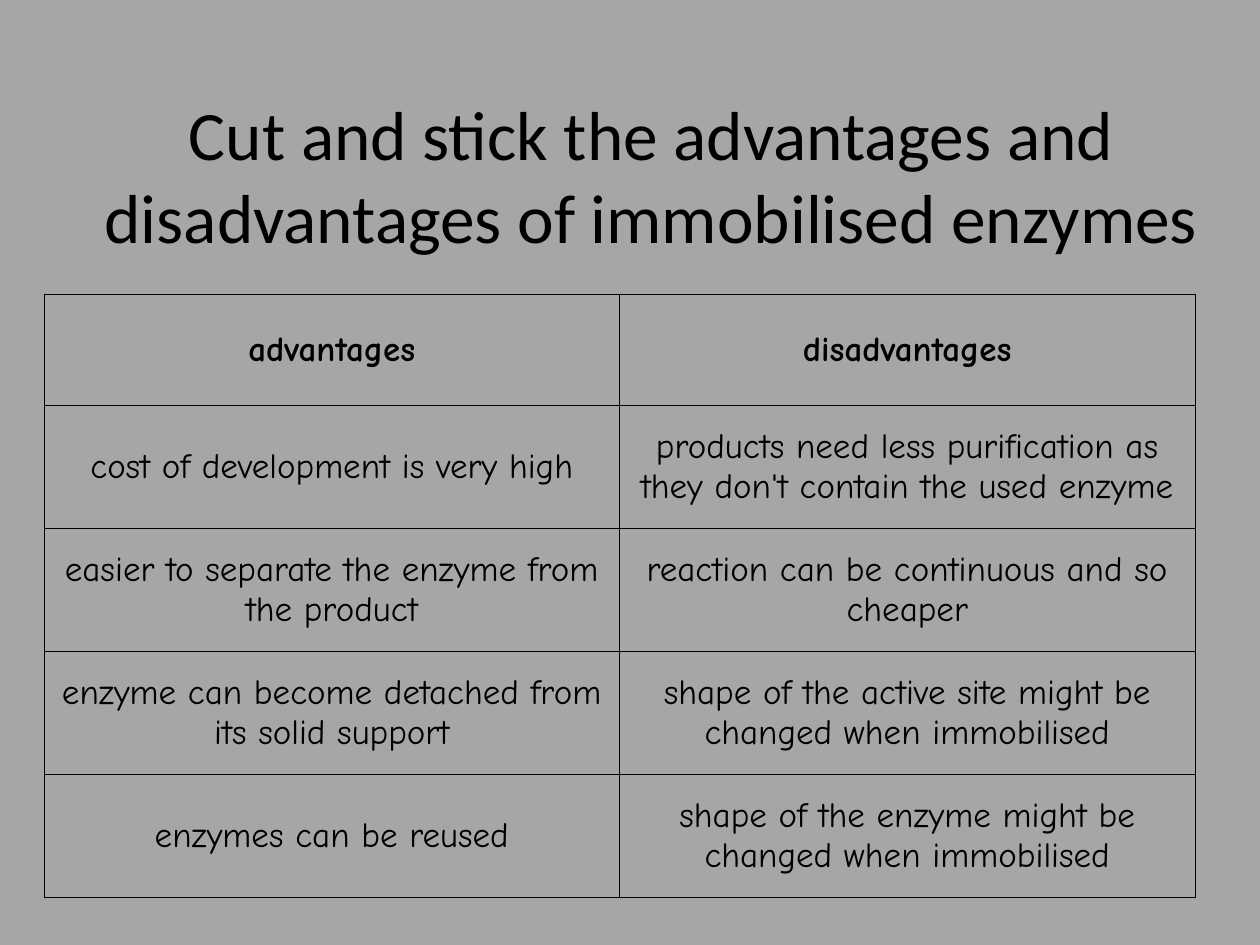
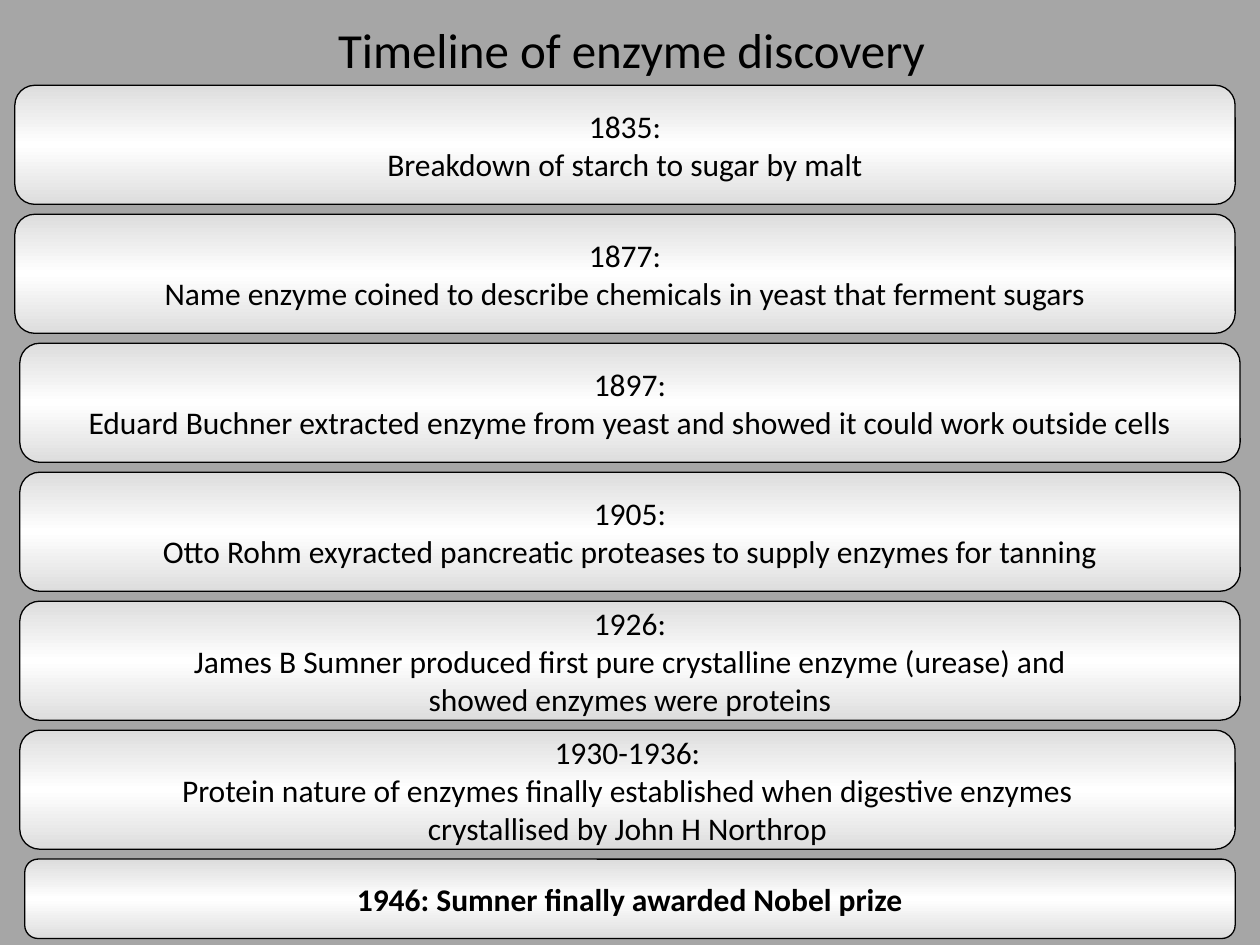
from copy import deepcopy
from lxml.etree import SubElement
from pptx import Presentation
from pptx.dml.color import RGBColor
from pptx.enum.shapes import MSO_SHAPE
from pptx.enum.text import MSO_ANCHOR, PP_ALIGN
from pptx.oxml.ns import qn
from pptx.util import Cm, Pt

GREY = RGBColor(0xA6, 0xA6, 0xA6)
SILVER = RGBColor(0xDD, 0xDD, 0xDD)
WHITE = RGBColor(0xFF, 0xFF, 0xFF)
BLACK = RGBColor(0, 0, 0)
SANS = "Calibri"
COMIC = "Comic Neue"

POINTS = [
    ("advantages", "disadvantages"),
    ("cost of development is very high",
     "products need less purification as they don't contain the used enzyme"),
    ("easier to separate the enzyme from the product",
     "reaction can be continuous and so cheaper"),
    ("enzyme can become detached from its solid support",
     "shape of the active site might be changed when immobilised"),
    ("enzymes can be reused",
     "shape of the enzyme might be changed when immobilised"),
]

EVENTS = [
    (0.3, 24.6, "1835:\nBreakdown of starch to sugar by malt"),
    (0.3, 24.6, "1877:\nName enzyme coined to describe chemicals in yeast "
                "that ferment sugars"),
    (0.4, 24.6, "1897:\nEduard Buchner extracted enzyme from yeast and "
                "showed it could work outside cells"),
    (0.4, 24.6, "1905:\nOtto Rohm exyracted pancreatic proteases to supply "
                "enzymes for tanning"),
    (0.4, 24.6, "1926:\nJames B Sumner produced first pure crystalline "
                "enzyme (urease) and\nshowed enzymes were proteins"),
    (0.4, 24.5, "1930-1936:\nProtein nature of enzymes finally established "
                "when digestive enzymes\ncrystallised by John H Northrop"),
]
PRIZE = "1946: Sumner finally awarded Nobel prize"


def write(frame, text, size, face=SANS, bold=False):
    frame.text = text
    for para in frame.paragraphs:
        para.alignment = PP_ALIGN.CENTER
        font = para.font
        font.name, font.size, font.bold = face, Pt(size), bold
        font.color.rgb = BLACK


def add_slide(deck):
    slide = deck.slides.add_slide(deck.slide_layouts[6])
    slide.background.fill.solid()
    slide.background.fill.fore_color.rgb = GREY
    return slide


def add_title(slide, text, size, left, top, width, height):
    frame = slide.shapes.add_textbox(
        Cm(left), Cm(top), Cm(width), Cm(height)).text_frame
    frame.word_wrap = True
    frame.vertical_anchor = MSO_ANCHOR.MIDDLE
    write(frame, text, size)


def add_border(cell):
    props = cell._tc.get_or_add_tcPr()
    for side in ("lnL", "lnR", "lnT", "lnB"):
        line = SubElement(props, qn(f"a:{side}"), w=str(Pt(0.5)))
        fill = SubElement(line, qn("a:solidFill"))
        SubElement(fill, qn("a:srgbClr"), val=str(BLACK))


def add_grid(slide, left, top, width, head, row):
    count = len(POINTS)
    table = slide.shapes.add_table(
        count, 2, Cm(left), Cm(top), Cm(width),
        Cm(head + row * (count - 1))).table
    table.horz_banding = table.first_row = False
    for r, texts in enumerate(POINTS):
        table.rows[r].height = Cm(row if r else head)
        for c, text in enumerate(texts):
            cell = table.cell(r, c)
            cell.margin_left = cell.margin_right = cell.margin_top = Cm(0.02)
            cell.margin_bottom = 0
            cell.vertical_anchor = MSO_ANCHOR.MIDDLE
            write(cell.text_frame, text, 20, COMIC, r == 0)
            add_border(cell)
            cell.fill.background()


def add_card(slide, text, left, top, width, height, bold=False):
    card = slide.shapes.add_shape(
        MSO_SHAPE.ROUNDED_RECTANGLE, Cm(left), Cm(top), Cm(width), Cm(height))
    card.shadow.inherit = False
    card.line.color.rgb = BLACK
    card.line.width = Pt(0.75)
    card.fill.gradient()
    card.fill.gradient_angle = 90
    stops = card._element.spPr.find(qn("a:gradFill")).find(qn("a:gsLst"))
    stops.append(deepcopy(stops[-1]))
    shades = zip(card.fill.gradient_stops, (0, 0.5, 1),
                 (SILVER, WHITE, SILVER))
    for stop, place, shade in shades:
        stop.position = place
        stop.color.rgb = shade
    frame = card.text_frame
    frame.word_wrap = False
    frame.vertical_anchor = MSO_ANCHOR.MIDDLE
    write(frame, text, 18, bold=bold)


def add_cards(slide, top, step, height):
    for i, (left, width, text) in enumerate(EVENTS):
        add_card(slide, text, left, top + i * step, width, height)
    add_card(slide, PRIZE, 0.5, top + len(EVENTS) * step, 24.4, 1.6, True)


def main():
    deck = Presentation()
    deck.slide_width, deck.slide_height = Cm(25.4), Cm(19.05)

    slide = add_slide(deck)
    add_title(slide, "Cut and stick the advantages and disadvantages of "
              "immobilised enzymes", 39.6, 1.7, 1.93, 22.86, 3.18)
    add_grid(slide, 0.89, 5.93, 23.2, 2.24, 2.48)

    slide = add_slide(deck)
    add_title(slide, "Timeline of enzyme discovery", 28, 1.3, 0, 22.86, 1.96)
    add_cards(slide, 1.72, 2.6, 2.4)

    deck.save("out.pptx")


if __name__ == "__main__":
    main()
